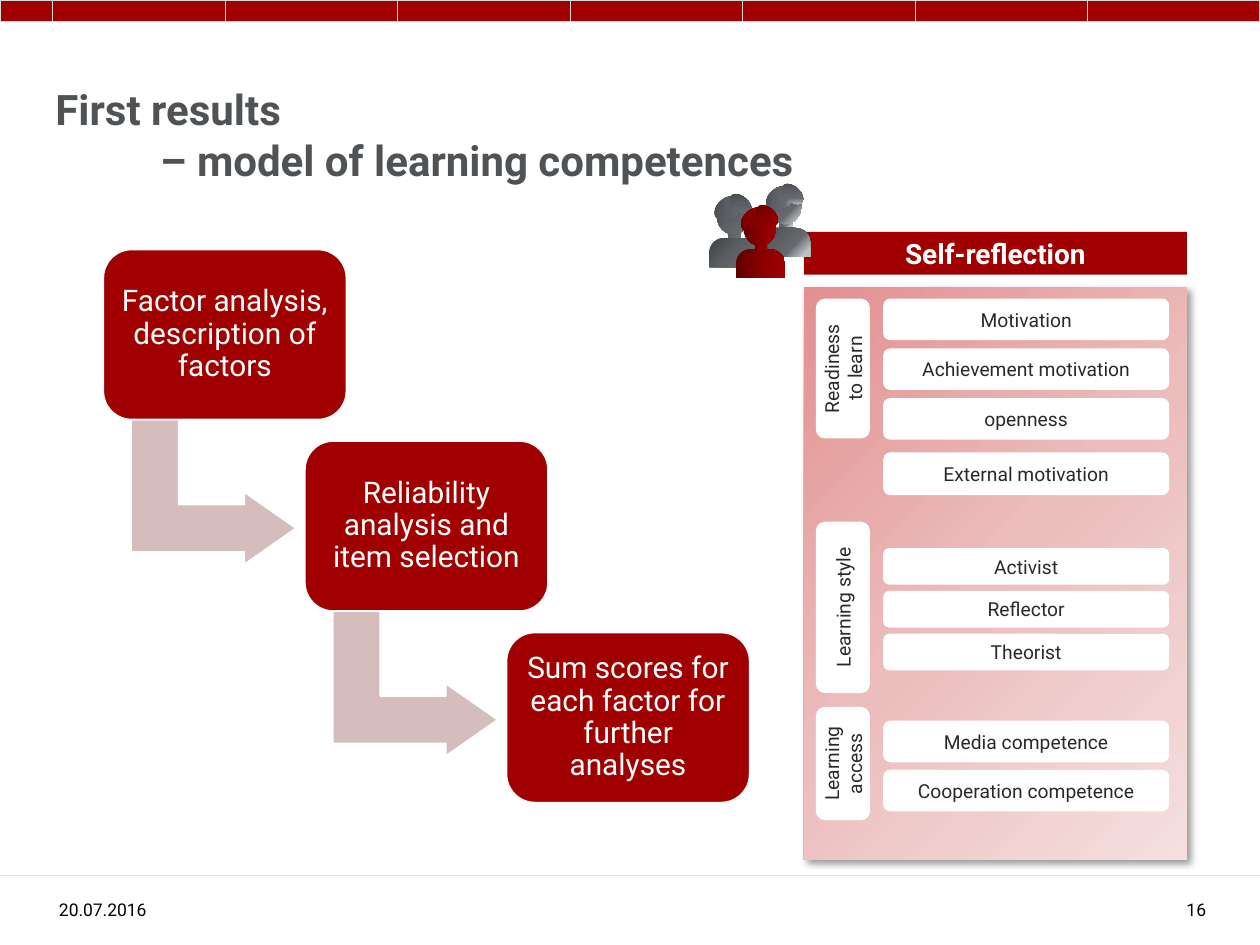
from lxml import etree
from pptx import Presentation
from pptx.dml.color import RGBColor
from pptx.enum.shapes import MSO_CONNECTOR, MSO_SHAPE as SHAPE
from pptx.enum.text import MSO_ANCHOR as ANCHOR, MSO_AUTO_SIZE, PP_ALIGN as ALIGN
from pptx.oxml import parse_xml
from pptx.oxml.ns import nsdecls, qn
from pptx.util import Inches, Pt

RED = RGBColor(0xA0, 0x00, 0x00)
WHITE = RGBColor(0xFF, 0xFF, 0xFF)
BLACK = RGBColor(0x00, 0x00, 0x00)
INK = RGBColor(0x27, 0x2A, 0x2A)
TITLE_GREY = RGBColor(0x4F, 0x53, 0x55)
BAR_EDGE = RGBColor(0xD9, 0xD9, 0xD9)
RULE_GREY = RGBColor(0xE3, 0xE4, 0xE5)
ARROW_PINK = RGBColor(0xD6, 0xBD, 0xBD)

# Gradients: angle and (position, colour) stops
PINK_FADE = (45, [(0, "E39090"), (50, "ECBDBD"), (100, "F5DFDF")])
GREY_FADE = (45, [(0, "414446"), (50, "5C6064"), (100, "6D7277")])
SILVER_FADE = (45, [(0, "414446"), (37, "5C6064"), (64, "65696E"),
                    (89, "BFC0C3"), (100, "BFBFBF")])
RED_FADE = (0, [(0, "5F0000"), (50, "870000"), (100, "A00000")])

# Parts of a person: shape, left, top, width, height, rotation
PERSON_PARTS = [
    (SHAPE.RECTANGLE, 0.15, 0.2, 0.1, 0.13, 0),
    (SHAPE.OVAL, 0.06, 0.02, 0.26, 0.28, 0),
    (SHAPE.ROUND_2_SAME_RECTANGLE, 0, 0.33, 0.39, 0.23, 0),
    (SHAPE.OVAL, 0.03, 0.01, 0.24, 0.17, 323.1),
    (SHAPE.OVAL, 0.15, 0, 0.2, 0.12, 41.8),
]


class Deck:
    font = "Roboto"

    def __init__(self):
        self.prs = Presentation()
        self.prs.slide_width, self.prs.slide_height = Inches(10), Inches(7.5)
        self.s = self.prs.slides.add_slide(self.prs.slide_layouts[5])

    def run(self, p, text, size, color, bold=False):
        r = p.add_run()
        r.text = text
        f = r.font
        f.name, f.size, f.bold = self.font, Pt(size), bold
        f.color.rgb = color

    def title(self, lines, x, y, w, h, tab):
        sp = self.s.shapes.title
        sp.left, sp.top, sp.width, sp.height = map(Inches, (x, y, w, h))
        tf = sp.text_frame
        tf.auto_size = MSO_AUTO_SIZE.NONE
        tf.vertical_anchor = ANCHOR.MIDDLE
        p = tf.paragraphs[0]
        p.alignment = ALIGN.LEFT
        tabs = etree.SubElement(p._p.get_or_add_pPr(), qn("a:tabLst"))
        etree.SubElement(tabs, qn("a:tab"), pos=str(Inches(tab)), algn="l")
        for i, line in enumerate(lines):
            if i:
                p.add_line_break()
            self.run(p, line, 24, TITLE_GREY, bold=True)

    def text(self, text, x, y, w, h, align):
        tf = self.s.shapes.add_textbox(*map(Inches, (x, y, w, h))).text_frame
        tf.word_wrap = True
        tf.vertical_anchor = ANCHOR.BOTTOM
        p = tf.paragraphs[0]
        p.alignment = align
        self.run(p, text, 10, BLACK)

    def shape(self, kind, x, y, w, h, fill, line=None, line_width=1, rot=0, adj=()):
        sp = self.s.shapes.add_shape(kind, *map(Inches, (x, y, w, h)))
        sp.shadow.inherit = False
        sp.rotation = rot
        for i, value in enumerate(adj):
            sp.adjustments[i] = value
        if isinstance(fill, RGBColor):
            sp.fill.solid()
            sp.fill.fore_color.rgb = fill
        else:
            self.gradient(sp, *fill)
        if line is None:
            sp.line.fill.background()
        else:
            sp.line.color.rgb = line
            sp.line.width = Pt(line_width)
        return sp

    def gradient(self, sp, angle, stops):
        gs = "".join(f'<a:gs pos="{pos * 1000}"><a:srgbClr val="{color}"/></a:gs>'
                     for pos, color in stops)
        sp._element.spPr.find(qn("a:prstGeom")).addnext(parse_xml(
            f'<a:gradFill {nsdecls("a")} rotWithShape="1"><a:gsLst>{gs}</a:gsLst>'
            f'<a:lin ang="{angle * 60000}" scaled="0"/></a:gradFill>'))

    def drop_shadow(self, sp):
        sp._element.spPr.find(qn("a:effectLst")).append(parse_xml(
            f'<a:outerShdw {nsdecls("a")} blurRad="{Pt(4)}" dist="{Pt(3)}" '
            'dir="2700000" algn="tl" rotWithShape="0"><a:srgbClr val="000000">'
            '<a:alpha val="40000"/></a:srgbClr></a:outerShdw>'))

    def label(self, sp, text, size, color, bold=False):
        tf = sp.text_frame
        tf.word_wrap = True
        tf.vertical_anchor = ANCHOR.MIDDLE
        p = tf.paragraphs[0]
        p.alignment = ALIGN.CENTER
        self.run(p, text, size, color, bold)
        return tf

    def pill(self, text, x, y, w, h, rot=0):
        sp = self.shape(SHAPE.ROUNDED_RECTANGLE, x, y, w, h, WHITE, rot=rot)
        self.label(sp, text, 11, INK)

    def step(self, text, x, y):
        sp = self.shape(SHAPE.ROUNDED_RECTANGLE, x, y, 1.93, 1.35, RED, WHITE,
                        adj=(0.167,))
        tf = self.label(sp, text, 17, WHITE)
        tf.margin_left = tf.margin_right = Inches(0.07)
        tf.margin_top = tf.margin_bottom = Inches(0.07)
        tf.paragraphs[0].line_spacing = 0.9

    def person(self, x, y, fill):
        for kind, dx, dy, w, h, rot in PERSON_PARTS:
            adj = (0.5, 0) if kind == SHAPE.ROUND_2_SAME_RECTANGLE else ()
            self.shape(kind, x + dx, y + dy, w, h, fill, rot=rot, adj=adj)

    def rule(self, x1, y1, x2, y2):
        ln = self.s.shapes.add_connector(MSO_CONNECTOR.STRAIGHT,
                                         *map(Inches, (x1, y1, x2, y2)))
        ln.line.color.rgb = RULE_GREY
        ln.line.width = Pt(0.5)
        etree.SubElement(ln._element.spPr, qn("a:effectLst"))


def main():
    deck = Deck()

    # Top bar: a short segment, then seven equal ones
    first = 0.42
    seg = (10 - first) / 7
    for i in reversed(range(7)):
        deck.shape(SHAPE.RECTANGLE, first + i * seg, 0, seg, 0.17, RED, BAR_EDGE, 0.5)
    deck.shape(SHAPE.RECTANGLE, 0, 0, first, 0.17, RED, BAR_EDGE, 0.5)

    # Title and footer
    deck.title(["First results ", "\t– model of learning competences"],
               0.34, 0.59, 6.93, 0.95, tab=0.83)
    deck.rule(0, 6.95, 10, 6.95)
    deck.text("20.07.2016", 0.37, 6.95, 1.1, 0.4, ALIGN.LEFT)
    deck.text("16", 8.85, 6.95, 0.82, 0.4, ALIGN.RIGHT)

    # Self-reflection panel
    panel = deck.shape(SHAPE.RECTANGLE, 6.38, 2.28, 3.04, 4.54, PINK_FADE)
    deck.drop_shadow(panel)
    header = deck.shape(SHAPE.RECTANGLE, 6.38, 1.84, 3.04, 0.34, RED)
    deck.label(header, "Self-reflection", 16, WHITE, bold=True)

    # Factor groups: label, its top and length, first item top, pitch, height, items
    groups = [
        ("Readiness to learn", 2.37, 1.11, 2.37, 0.395, 0.33,
         ["Motivation", "Achievement motivation", "openness"]),
        ("Learning style", 4.14, 1.36, 4.35, 0.34, 0.29,
         ["Activist", "Reflector", "Theorist"]),
        ("Learning access", 5.61, 0.9, 5.72, 0.39, 0.33,
         ["Media competence", "Cooperation competence"]),
    ]
    thick, centre_x = 0.43, 6.69
    for name, top, length, y, pitch, height, items in groups:
        deck.pill(name, centre_x - length / 2, top + (length - thick) / 2,
                  length, thick, rot=270)
        for i, item in enumerate(items):
            deck.pill(item, 7.01, y + i * pitch, 2.27, height)
    deck.pill("External motivation", 7.01, 3.59, 2.27, 0.34)

    # People icon
    deck.person(5.63, 1.56, GREY_FADE)
    deck.person(6.04, 1.48, SILVER_FADE)
    deck.person(5.84, 1.65, RED_FADE)

    # Analysis steps, joined by bent arrows
    steps = ["Factor analysis, description of factors",
             "Reliability analysis and item selection",
             "Sum scores for each factor for further analyses"]
    for i, text in enumerate(steps):
        x, y = 0.82 + i * 1.6, 1.98 + i * 1.52
        if i < len(steps) - 1:
            deck.shape(SHAPE.BENT_UP_ARROW, x + 0.3, y + 1.27, 1.15, 1.31, ARROW_PINK,
                       WHITE, rot=90, adj=(0.328, 0.25, 0.358))
        deck.step(text, x, y)

    deck.prs.save("out.pptx")


if __name__ == "__main__":
    main()
